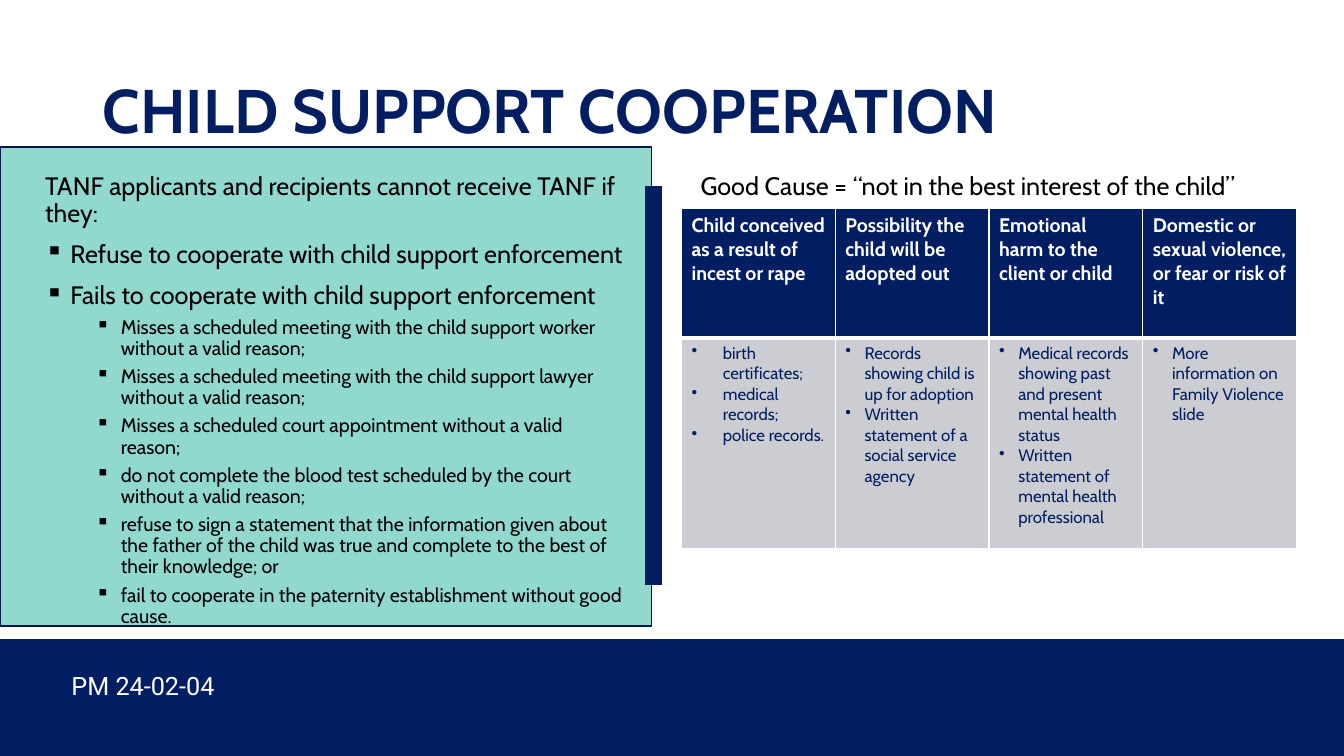
from lxml.etree import SubElement
from pptx import Presentation
from pptx.dml.color import RGBColor
from pptx.enum.shapes import MSO_CONNECTOR, MSO_SHAPE
from pptx.enum.text import MSO_ANCHOR, PP_ALIGN
from pptx.oxml import parse_xml
from pptx.oxml.ns import nsdecls, qn
from pptx.util import Inches, Pt

WIDTH, HEIGHT = 13.33, 7.5
NAVY, MINT, GREY, WHITE, BLACK = "001E61", "91D9CF", "CCCDD2", "FFFFFF", "000000"

RULES = [
    (None, "TANF applicants and recipients cannot receive TANF if they:"),
    (0, "Refuse to cooperate with child support enforcement"),
    (0, "Fails to cooperate with child support enforcement"),
    (1, "Misses a scheduled meeting with the child support worker without a valid reason;"),
    (1, "Misses a scheduled meeting with the child support lawyer without a valid reason;"),
    (1, "Misses a scheduled court appointment without a valid reason;"),
    (1, "do not complete the blood test scheduled by the court without a valid reason;"),
    (1, "refuse to sign a statement that the information given about the father of the "
        "child was true and complete to the best of their knowledge; or"),
    (1, "fail to cooperate in the paternity establishment without good cause."),
]
# Heading, bullet indent and proofs of each good cause
CAUSES = [
    ("Child conceived as a result of incest or rape", 0.31,
     ["birth certificates;", "medical records;", "police records."]),
    ("Possibility the child will be adopted out", 0.19,
     ["Records showing child is up for adoption",
      "Written statement of a social service agency"]),
    ("Emotional harm to the client or child", 0.19,
     ["Medical records showing past and present mental health status",
      "Written statement of mental health professional"]),
    ("Domestic or sexual violence, or fear or risk of it", 0.19,
     ["More information on Family Violence slide"]),
]


def rgb(code):
    return RGBColor.from_string(code)


def inches(*lengths):
    return [Inches(length) for length in lengths]


def add_span(para, text, size, color, bold=False, font="Cabin"):
    span = para.add_run()
    span.text = text
    span.font.name, span.font.size, span.font.bold = font, Pt(size), bold
    span.font.color.rgb = rgb(color)


def next_para(frame, index):
    return frame.paragraphs[0] if index == 0 else frame.add_paragraph()


def set_bullet(para, char, margin, hang):
    props = para._p.get_or_add_pPr()
    props.set("marL", str(Inches(margin)))
    props.set("indent", str(-Inches(hang)))
    SubElement(props, qn("a:buChar")).set("char", char)


def add_text_box(page, box):
    frame = page.shapes.add_textbox(*inches(*box)).text_frame
    frame.word_wrap = True
    return frame


def add_panel(page, box, fill, line=None):
    panel = page.shapes.add_shape(MSO_SHAPE.RECTANGLE, *inches(*box))
    panel.shadow.inherit = False
    panel.fill.solid()
    panel.fill.fore_color.rgb = rgb(fill)
    if line:
        panel.line.color.rgb = rgb(line)
        panel.line.width = Pt(1)
    else:
        panel.line.fill.background()


def place_title(page, box):
    title = page.shapes.title
    title.left, title.top, title.width, title.height = inches(*box)
    frame = title.text_frame
    frame.word_wrap = True
    frame.vertical_anchor = MSO_ANCHOR.MIDDLE
    para = frame.paragraphs[0]
    para.alignment, para.line_spacing = PP_ALIGN.LEFT, 0.9
    add_span(para, "CHILD SUPPORT COOPERATION", 44, NAVY, bold=True)


def add_rules(page, box):
    left, top, width, height = box
    add_panel(page, box, MINT, "001648")
    frame = add_text_box(page, (left + 0.35, top + 0.21, width - 0.53, height - 1.01))
    for index, (level, text) in enumerate(RULES):
        para = next_para(frame, index)
        para.line_spacing = 0.9
        if index:
            para.space_before = Pt(5 if level else 10)
        if level is not None:
            para.level = level
            set_bullet(para, "▪", 0.25 + 0.5 * level, 0.25)
        add_span(para, text, 14 if level else 18, BLACK)


def add_divider(page, box):
    """Two thick lines side by side, one on each edge of the box."""
    left, top, width, height = box
    for x in (left, left + width):
        line = page.shapes.add_connector(
            MSO_CONNECTOR.STRAIGHT, *inches(x, top, x, top + height))
        line.line.color.rgb = rgb(NAVY)
        line.line.width = Pt(6)
        SubElement(line._element.spPr, qn("a:effectLst"))


def style_cell(cell, fill, bottom):
    cell.fill.solid()
    cell.fill.fore_color.rgb = rgb(fill)
    props = cell._tc.get_or_add_tcPr()
    for index, (side, points) in enumerate(zip("LRTB", (1, 1, 1, bottom))):
        props.insert(index, parse_xml(
            f'<a:ln{side} {nsdecls("a")} w="{Pt(points)}"><a:solidFill>'
            f'<a:srgbClr val="{WHITE}"/></a:solidFill></a:ln{side}>'))


def add_good_causes(page, box):
    left, top, width, height = box
    para = add_text_box(page, (left + 0.09, top, width + 0.04, 0.4)).paragraphs[0]
    para.line_spacing = 0.9
    add_span(para, "Good Cause = “not in the best interest of the child”", 18, BLACK)

    table_box = (left, top + 0.4, width, height - 0.4)
    table = page.shapes.add_table(2, len(CAUSES), *inches(*table_box)).table
    table.rows[0].height = Inches(1.28)
    table.rows[1].height = Inches(height - 0.4 - 1.28)
    for column, (heading, indent, proofs) in enumerate(CAUSES):
        head, body = table.cell(0, column), table.cell(1, column)
        style_cell(head, NAVY, bottom=3)
        style_cell(body, GREY, bottom=1)
        add_span(head.text_frame.paragraphs[0], heading, 14, WHITE, bold=True)
        for index, proof in enumerate(proofs):
            para = next_para(body.text_frame, index)
            set_bullet(para, "•", indent, indent)
            add_span(para, proof, 12, NAVY)


def add_footer(page, box):
    left, top, width, height = box
    add_panel(page, box, NAVY)
    frame = add_text_box(page, (left + 0.61, top + 0.26, width / 2, 0.4))
    add_span(frame.paragraphs[0], "PM 24-02-04", 18, WHITE, font="Roboto")


def main():
    deck = Presentation()
    deck.slide_width, deck.slide_height = inches(WIDTH, HEIGHT)
    page = deck.slides.add_slide(deck.slide_layouts[5])
    add_footer(page, (0, 6.34, WIDTH, HEIGHT - 6.34))
    add_rules(page, (0, 1.46, 6.46, 4.75))
    place_title(page, (0.92, 0.4, 11.5, 1.45))
    add_good_causes(page, (6.76, 1.67, 6.1, 3.77))
    add_divider(page, (6.44, 1.85, 0.08, 3.95))
    deck.save("out.pptx")


if __name__ == "__main__":
    main()
